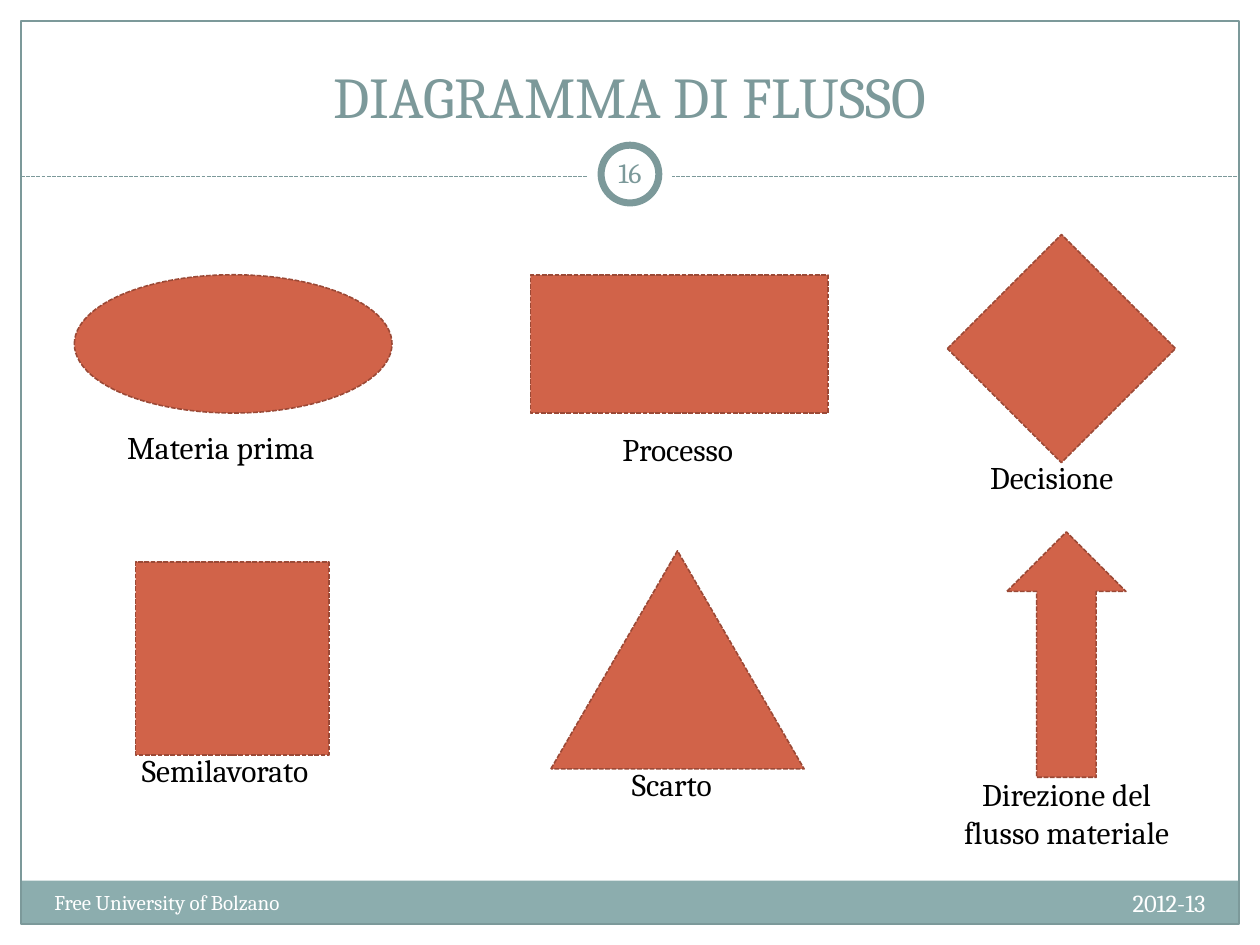
import pptx
import pptx.util
import pptx.dml.color
import pptx.enum.dml
import pptx.enum.shapes
import pptx.enum.text
import pptx.oxml

Pt = pptx.util.Pt
Kind = pptx.enum.shapes.MSO_SHAPE
Align = pptx.enum.text.PP_ALIGN
Anchor = pptx.enum.text.MSO_ANCHOR
Fit = pptx.enum.text.MSO_AUTO_SIZE
DASH = pptx.enum.dml.MSO_LINE.SQUARE_DOT

FONT = "Cambria"
COLORS = {"teal": "7C999A", "band": "8CADAE", "white": "FFFFFF",
          "black": "000000", "rust": "D16349", "edge": "9B4936"}
WIDE, HIGH, EDGE = 720, 540, 12
RULE, HUB = 100.8, 99.5  # heights of the dashed rule and of the ring's centre

TITLE = "DIAGRAMMA DI FLUSSO"
NUMBER = "16"
SOURCE = "Free University of Bolzano"
YEAR = "2012-13"

# Symbol, its box, label, its box, whether the label wraps
SYMBOLS = [
    (Kind.OVAL, (42.5, 157, 181.5, 79), "Materia prima", (65.5, 241.2, 130.3, 29), False),
    (Kind.RECTANGLE, (303.1, 157, 170, 79), "Processo", (348.5, 241.9, 85.7, 29), False),
    (Kind.DIAMOND, (541.4, 134, 130.4, 130.4), "Decisione", (558.7, 258, 92.9, 29), False),
    (Kind.RECTANGLE, (77.5, 321, 110.4, 110.4), "Semilavorato", (74, 425.5, 121, 29), False),
    (Kind.ISOSCELES_TRIANGLE, (314.8, 314.8, 144.7, 124.6), "Scarto",
     (354, 433.5, 65.5, 29), False),
    (Kind.UP_ARROW, (575.4, 304, 68, 140.2), "Direzione del flusso materiale",
     (535.7, 439.2, 147.6, 51), True),
]


def tint(name):
    return pptx.dml.color.RGBColor.from_string(COLORS[name])


def trace(line, name, width, dash=None):
    line.color.rgb = tint(name)
    line.width = Pt(width)
    if dash:
        line.dash_style = dash


def draw(slide, kind, box, fill=None, line=None, width=0.75, dash=None):
    shape = slide.shapes.add_shape(kind, *map(Pt, box))
    shape.shadow.inherit = False
    if fill:
        shape.fill.solid()
        shape.fill.fore_color.rgb = tint(fill)
    else:
        shape.fill.background()
    if line:
        trace(shape.line, line, width, dash)
    else:
        shape.line.fill.background()


def disc(slide, size, **style):
    draw(slide, Kind.OVAL, (WIDE / 2 - size / 2, HUB - size / 2, size, size), "white", **style)


def write(frame, text, size, color, align=Align.LEFT, anchor=Anchor.TOP):
    frame.vertical_anchor = anchor
    para = frame.paragraphs[0]
    para.alignment = align
    run = para.add_run()
    run.text = text
    run.font.name = FONT
    run.font.size = Pt(size)
    run.font.color.rgb = tint(color)


def label(slide, box, *style, wrap=True, fit=Fit.NONE, inset=None):
    frame = slide.shapes.add_textbox(*map(Pt, box)).text_frame
    frame.word_wrap = wrap
    frame.auto_size = fit
    if inset is not None:
        frame.margin_left = frame.margin_right = Pt(inset)
        frame.margin_top = frame.margin_bottom = Pt(inset)
    write(frame, *style)


def main():
    deck = pptx.Presentation()
    deck.slide_width, deck.slide_height = Pt(WIDE), Pt(HIGH)
    slide = deck.slides.add_slide(deck.slide_layouts[5])

    # Title
    title = slide.shapes.title
    title.left, title.top, title.width, title.height = map(Pt, (24, 18, 672, 60))
    title.text_frame.auto_size = Fit.NONE
    write(title.text_frame, TITLE, 33, "teal", Align.CENTER, Anchor.BOTTOM)

    # Footer band, frame and dashed rule
    draw(slide, Kind.RECTANGLE, (EDGE, 503.3, WIDE - 2 * EDGE, 24.5), "band")
    draw(slide, Kind.RECTANGLE, (EDGE, EDGE, WIDE - 2 * EDGE, HIGH - 2 * EDGE), line="teal")
    rule = slide.shapes.add_connector(pptx.enum.shapes.MSO_CONNECTOR.STRAIGHT,
                                      Pt(EDGE), Pt(RULE), Pt(WIDE - EDGE), Pt(RULE))
    trace(rule.line, "teal", 0.75, DASH)
    rule.line._get_or_add_ln().addnext(pptx.oxml.parse_xml(
        '<a:effectLst xmlns:a="http://schemas.openxmlformats.org/drawingml/2006/main"/>'))

    # Slide number in its ring
    disc(slide, 48)
    disc(slide, 33, line="teal", width=4)
    label(slide, (342, 81.4, 36, 34.6), NUMBER, 16, "teal", Align.CENTER, Anchor.MIDDLE,
          inset=3.6)

    # Footer text
    label(slide, (24, 504.7, 282, 29), SOURCE, 12, "white")
    label(slide, (456, 504, 240, 29), YEAR, 14, "white", Align.RIGHT)

    # Flow chart symbols with their labels
    for kind, box, text, place, wrap in SYMBOLS:
        draw(slide, kind, box, "rust", "edge", 0.9, DASH)
        label(slide, place, text, 18, "black", Align.CENTER if wrap else Align.LEFT,
              wrap=wrap, fit=Fit.SHAPE_TO_FIT_TEXT)

    deck.save("out.pptx")


if __name__ == "__main__":
    main()
